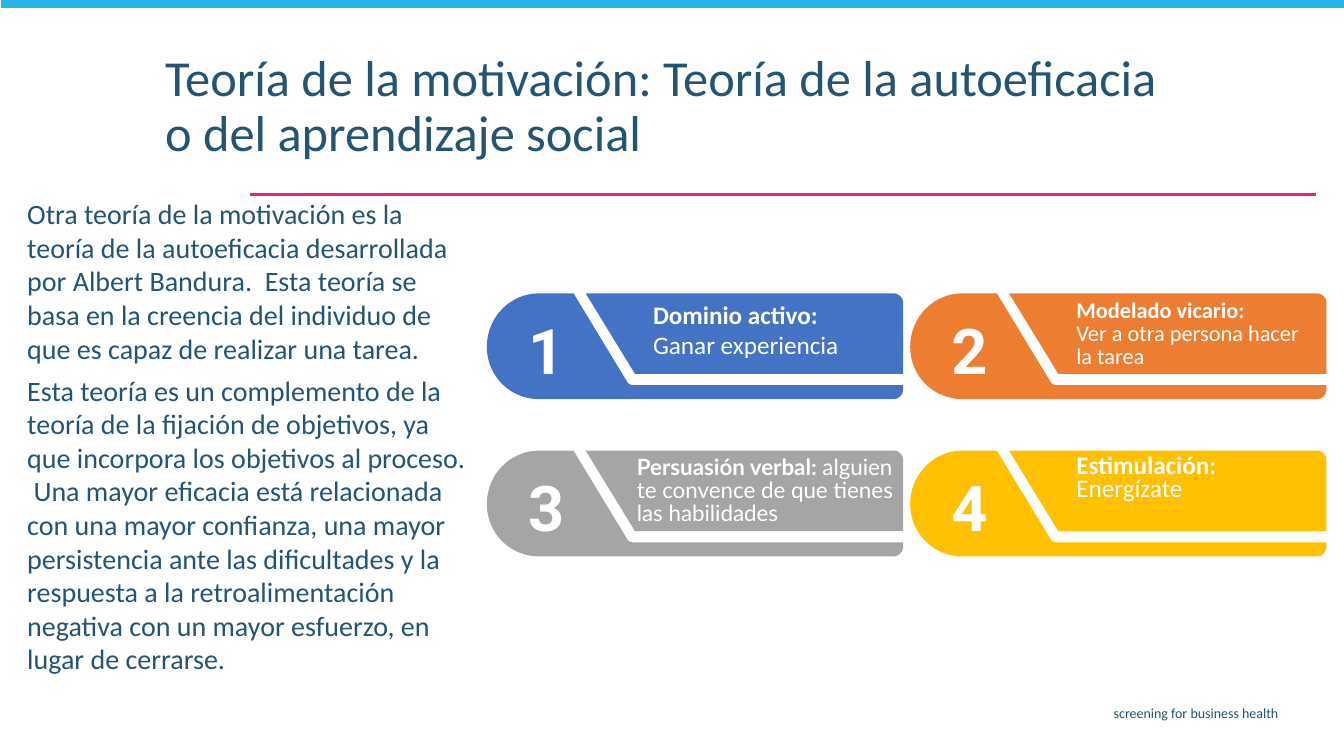
"""Build the slide on self-efficacy theory with four numbered cards."""
from pptx import Presentation
from pptx import util as u
from pptx.dml.color import RGBColor
from pptx.enum import shapes, text
from pptx.oxml.ns import qn

NAVY, PINK, SKY, WHITE = "245473", "EC2179", "29B3E8", "FFFFFF"
TITLE = "Teoría de la motivación: Teoría de la autoeficacia o del aprendizaje social"
FOOTER = "screening for business health"
BODY = [
    "Otra teoría de la motivación es la teoría de la autoeficacia desarrollada por "
    "Albert Bandura.  Esta teoría se basa en la creencia del individuo de que es capaz "
    "de realizar una tarea.",
    "Esta teoría es un complemento de la teoría de la fijación de objetivos, ya que "
    "incorpora los objetivos al proceso.  Una mayor eficacia está relacionada con una "
    "mayor confianza, una mayor persistencia ante las dificultades y la respuesta a la "
    "retroalimentación negativa con un mayor esfuerzo, en lugar de cerrarse.",
]
TIGHT = {"line_spacing": u.Pt(16.6)}
CARDS = [
    {"color": "4472C4", "font": "Calibri", "size": 18, "left": 1.55, "width": 2.45, "format": {},
     "paras": [[("Dominio activo:", True)], [("Ganar experiencia", False)]]},
    {"color": "ED7D31", "font": "Calibri", "size": 16, "left": 1.55, "width": 2.45, "format": TIGHT,
     "paras": [[("Modelado vicario:", True)], [("Ver a otra persona hacer la tarea", False)]]},
    {"color": "A5A5A5", "font": "Lato", "size": 16, "left": 1.39, "width": 2.86, "format": TIGHT,
     "paras": [[("Persuasión verbal: ", True),
                ("alguien te convence de que tienes las habilidades", False)]]},
    {"color": "FFC000", "font": "Calibri", "size": 18, "left": 1.55, "width": 2.45, "format": TIGHT,
     "paras": [[("Estimulación: ", True), ("Energízate", False)]]},
]
GRID_LEFT, GRID_TOP, STEP_X, STEP_Y = 4.83, 2.91, 4.2, 1.56
# Each segment holds one point for a straight line or three for a curve.
PANEL = [
    [(0.98, 0)],
    [(4.04, 0)],
    [(4.08, 0), (4.13, 0.04), (4.13, 0.09)],
    [(4.13, 0.8)],
    [(1.47, 0.8)],
]
BASE = [
    [(1.44, 0.91)],
    [(1.43, 0.91), (1.41, 0.9), (1.4, 0.89)],
    [(0.86, 0)],
    [(0.52, 0)],
    [(0.23, 0), (0, 0.24), (0, 0.53)],
    [(0, 0.82), (0.23, 1.05), (0.52, 1.05)],
    [(4.04, 1.05)],
    [(4.08, 1.05), (4.13, 1.01), (4.13, 0.96)],
    [(4.13, 0.91)],
]


def rgb(value):
    return RGBColor.from_string(value)


def paint(shape, color):
    shape.shadow.inherit = False
    shape.fill.solid()
    shape.fill.fore_color.rgb = rgb(color)
    shape.line.fill.background()


def add_outline(page, left, top, segments, color):
    points = [(u.Inches(left + x), u.Inches(top + y)) for segment in segments for x, y in segment]
    builder = page.shapes.build_freeform(*points[0])
    builder.add_line_segments(points[1:], close=True)
    shape = builder.convert_to_shape()
    lines = iter(list(shape._element.iter(qn("a:lnTo"))))
    for segment in segments[1:]:
        steps = [next(lines) for _ in segment]
        if len(steps) == 3:
            curve = steps[0].makeelement(qn("a:cubicBezTo"), {})
            steps[0].addprevious(curve)
            for step in steps:
                curve.append(step[0])
                step.getparent().remove(step)
    paint(shape, color)


def add_text(page, at, paras, font, size, color, wrap=True, inset=(0.1, 0.05), **layout):
    box = page.shapes.add_textbox(*[u.Inches(v) for v in at])
    frame = box.text_frame
    frame.word_wrap = wrap
    frame.margin_left = frame.margin_right = u.Inches(inset[0])
    frame.margin_top = frame.margin_bottom = u.Inches(inset[1])
    for index, runs in enumerate(paras):
        para = frame.add_paragraph() if index else frame.paragraphs[0]
        for name, value in layout.items():
            if index or name != "space_before":
                setattr(para, name, value)
        for words, bold in runs:
            span = para.add_run()
            span.text = words
            span.font.color.rgb = rgb(color)
            for name, value in {"name": font, "size": u.Pt(size), "bold": bold}.items():
                setattr(span.font, name, value)


def add_card(page, index, card):
    row, column = divmod(index, 2)
    left, top = GRID_LEFT + column * STEP_X, GRID_TOP + row * STEP_Y
    for segments in (PANEL, BASE):
        add_outline(page, left, top, segments, card["color"])
    add_text(page, (left + 0.31, top + 0.13, 0.55, 0.86), [[(str(index + 1), True)]],
             "Roboto", 45, WHITE, wrap=False, alignment=text.PP_ALIGN.CENTER)
    add_text(page, (left + card["left"], top + 0.01, card["width"], 0.8), card["paras"],
             card["font"], card["size"], WHITE, **card["format"])


def main():
    deck = Presentation()
    deck.slide_width, deck.slide_height = u.Inches(40 / 3), u.Inches(7.5)
    page = deck.slides.add_slide(deck.slide_layouts[6])

    rule = page.shapes.add_connector(
        shapes.MSO_CONNECTOR.STRAIGHT, *[u.Inches(v) for v in (13.06, 1.93, 2.48, 1.93)])
    rule.line.color.rgb = rgb(PINK)
    rule.line.width = u.Pt(1.5)
    properties = rule._element.spPr
    properties.append(properties.makeelement(qn("a:effectLst"), {}))

    band = page.shapes.add_shape(
        shapes.MSO_SHAPE.RECTANGLE, *[u.Inches(v) for v in (0.01, -0.02, 13.34, 0.1)])
    paint(band, SKY)

    add_text(page, (3.65, 6.94, 9.13, 0.29), [[(FOOTER, False)]], "Calibri", 10, NAVY,
             alignment=text.PP_ALIGN.RIGHT)
    add_text(page, (1.54, 0.48, 10.25, 0.76), [[(TITLE, False)]], "Calibri", 36, NAVY,
             line_spacing=0.9)
    add_text(page, (0.18, 1.91, 4.55, 4.89), [[(words, False)] for words in BODY],
             "Calibri", 20, NAVY, inset=(0.09, 0.04), space_before=u.Pt(6))
    for index, card in enumerate(CARDS):
        add_card(page, index, card)
    deck.save("out.pptx")


if __name__ == "__main__":
    main()
